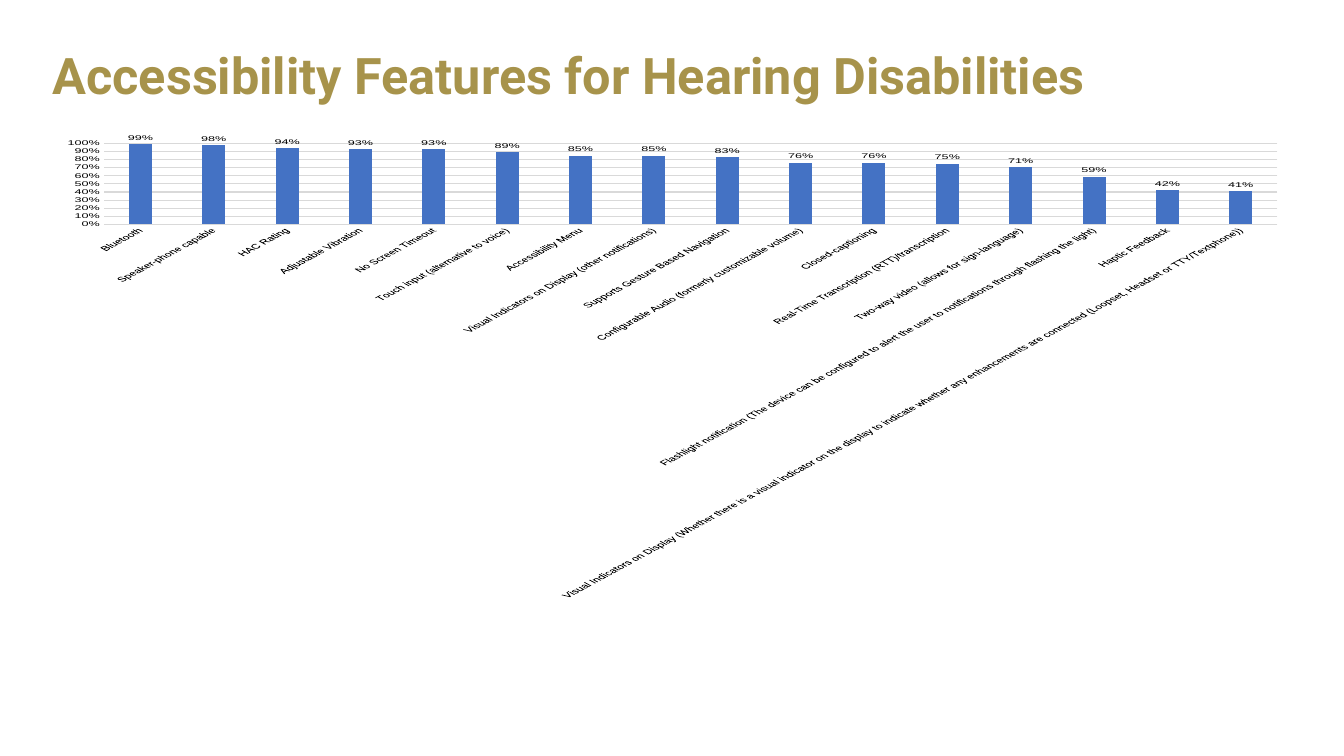
from dataclasses import dataclass
from pptx import Presentation
from pptx.chart.data import CategoryChartData as Data
from pptx.dml.color import RGBColor as RGB
from pptx.enum.chart import XL_CHART_TYPE as Kind, XL_LABEL_POSITION as Spot, XL_TICK_MARK as Tick
from pptx.enum.text import MSO_ANCHOR as Anchor, MSO_AUTO_SIZE as Fit, PP_ALIGN as Align
from pptx.util import Inches, Pt

TITLE = "Accessibility Features for Hearing Disabilities"
RATES = [
    ("Bluetooth", 0.99),
    ("Speaker-phone capable", 0.98),
    ("HAC Rating", 0.94),
    ("Adjustable Vibration", 0.93),
    ("No Screen Timeout", 0.93),
    ("Touch input (alternative to voice)", 0.89),
    ("Accessibility Menu", 0.85),
    ("Visual Indicators on Display (other notifications)", 0.85),
    ("Supports Gesture Based Navigation", 0.83),
    ("Configurable Audio (formerly customizable volume)", 0.76),
    ("Closed-captioning", 0.76),
    ("Real-Time Transcription (RTT)/transcription", 0.75),
    ("Two-way video (allows for sign-language)", 0.71),
    ("Flashlight notification (The device can be configured to alert the user "
     "to notifications through flashing the light)", 0.59),
    ("Haptic Feedback", 0.42),
    ("Visual Indicators on Display (Whether there is a visual indicator on the display to indicate "
     "whether any enhancements are connected (Loopset, Headset or TTY/Textphone))", 0.41),
]


@dataclass(frozen=True)
class Theme:
    gold: RGB = RGB.from_string("A7934B")
    blue: RGB = RGB.from_string("4472C4")
    grey: RGB = RGB.from_string("D9D9D9")
    black: RGB = RGB.from_string("000000")
    head: str = "Roboto"
    body: str = "Arial"
    big: Pt = Pt(36)
    base: Pt = Pt(10)
    small: Pt = Pt(9)
    rule: Pt = Pt(0.75)


LOOK = Theme()
LEFT, WIDE = Inches(0.42), Inches(12.5)
TOP, HEAD, PLOT = Inches(0.22), Inches(1.11), Inches(4.62)


def put(item, **values):
    for name, value in values.items():
        setattr(item, name, value)


def style(font, face, size, color, bold=False):
    put(font, name=face, size=size, bold=bold)
    font.color.rgb = color


def rule(line):
    line.color.rgb = LOOK.grey
    line.width = LOOK.rule


def add_title(slide):
    title = slide.shapes.title
    put(title, left=LEFT, top=TOP, width=WIDE, height=HEAD)
    frame = title.text_frame
    frame.text = TITLE
    put(frame, vertical_anchor=Anchor.MIDDLE, word_wrap=True, auto_size=Fit.NONE)
    para = frame.paragraphs[0]
    put(para, alignment=Align.LEFT, line_spacing=0.9)
    style(para.runs[0].font, LOOK.head, LOOK.big, LOOK.gold, True)


def add_bars(slide):
    data = Data(number_format="0%")
    data.categories = [name for name, rate in RATES]
    data.add_series("Series 1", [rate for name, rate in RATES])
    chart = slide.shapes.add_chart(
        Kind.COLUMN_CLUSTERED, LEFT, TOP + HEAD, WIDE, PLOT, data).chart
    put(chart, has_legend=False, has_title=False)
    style(chart.font, LOOK.body, LOOK.base, LOOK.black)

    cats, vals = chart.category_axis, chart.value_axis
    for axis in (cats, vals):
        put(axis, major_tick_mark=Tick.NONE, minor_tick_mark=Tick.NONE)
        style(axis.tick_labels.font, LOOK.body, LOOK.small, LOOK.black)
    rule(cats.format.line)
    put(vals, minimum_scale=0, maximum_scale=1, has_major_gridlines=True)
    rule(vals.major_gridlines.format.line)
    vals.format.line.fill.background()
    put(vals.tick_labels, number_format="0%", number_format_is_linked=False)

    plot = chart.plots[0]
    put(plot, gap_width=219, overlap=-27, vary_by_categories=False, has_data_labels=True)
    bars = plot.series[0]
    bars.format.fill.solid()
    bars.format.fill.fore_color.rgb = LOOK.blue
    put(plot.data_labels, show_value=True, position=Spot.OUTSIDE_END,
        number_format="0%", number_format_is_linked=False)
    style(plot.data_labels.font, LOOK.body, LOOK.small, LOOK.black)


def main():
    deck = Presentation()
    put(deck, slide_width=Inches(13.33), slide_height=Inches(7.5))
    slide = deck.slides.add_slide(deck.slide_layouts[5])
    add_title(slide)
    add_bars(slide)
    deck.save("out.pptx")


if __name__ == "__main__":
    main()
